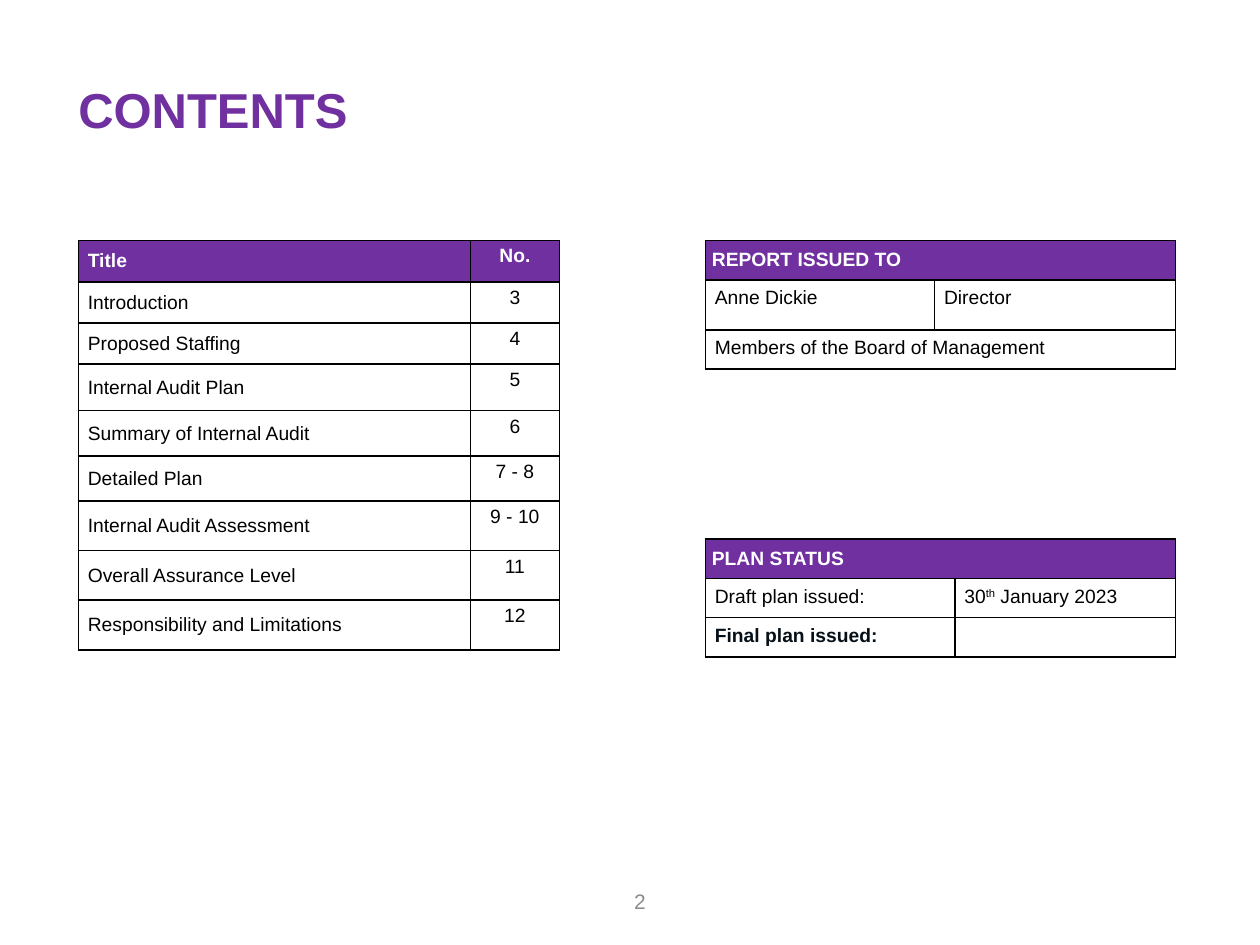
from lxml.etree import SubElement
from pptx import Presentation
from pptx.dml.color import RGBColor
from pptx.enum.text import MSO_ANCHOR, PP_ALIGN
from pptx.oxml.ns import qn
from pptx.util import Cm, Pt

COLORS = {"purple": "7030A0", "white": "FFFFFF", "black": "000000",
          "ink": "061018", "grey": "8C8C8C"}
CONTENTS = [("Title", "No."), ("Introduction", "3"), ("Proposed Staffing", "4"),
            ("Internal Audit Plan", "5"), ("Summary of Internal Audit", "6"),
            ("Detailed Plan", "7 - 8"), ("Internal Audit Assessment", "9 - 10"),
            ("Overall Assurance Level", "11"), ("Responsibility and Limitations", "12")]
RECIPIENTS = [("REPORT ISSUED TO",), ("Anne Dickie", "Director"),
              ("Members of the Board of Management",)]
STATUS = [("PLAN STATUS",), ("Draft plan issued:", ("30", "th", " January 2023")),
          ("Final plan issued:", "")]


def color(name):
    """Return a named colour."""
    return RGBColor.from_string(COLORS[name])


def style_para(para, size, tone, bold=False, align=PP_ALIGN.LEFT):
    """Set the font and alignment of a paragraph."""
    para.alignment = align
    font = para.font
    font.name, font.size, font.bold = "Arial", Pt(size), bold
    font.color.rgb = color(tone)


def set_margins(cell, side, end):
    """Set the side and the top and bottom margins of a cell."""
    cell.margin_left = cell.margin_right = Cm(side)
    cell.margin_top = cell.margin_bottom = Cm(end)


def add_borders(cell):
    """Draw a thin black line on each side of a cell."""
    properties = cell._tc.get_or_add_tcPr()
    for index, side in enumerate(("lnL", "lnR", "lnT", "lnB")):
        line = SubElement(properties, qn(f"a:{side}"), w=str(Pt(1)))
        fill = SubElement(line, qn("a:solidFill"))
        SubElement(fill, qn("a:srgbClr"), val=COLORS["black"])
        properties.insert(index, line)


def write_cell(cell, content):
    """Write text, or a text, superscript and text triple, into a cell."""
    para = cell.text_frame.paragraphs[0]
    parts = (content,) if isinstance(content, str) else content
    for index, text in enumerate(parts):
        if text:
            span = para.add_run()
            span.text = text
            if index == 1:
                span._r.get_or_add_rPr().set("baseline", "30000")


def add_grid(page, left, top, widths, heights, rows):
    """Add a bordered table with a purple heading; short rows are merged."""
    frame = page.shapes.add_table(len(rows), len(widths), Cm(left), Cm(top),
                                  Cm(sum(widths)), Cm(sum(heights)))
    table = frame.table
    table.first_row = table.horz_banding = False
    for column, width in zip(table.columns, widths):
        column.width = Cm(width)
    for number, (row, height, contents) in enumerate(zip(table.rows, heights, rows)):
        row.height = Cm(height)
        heading = number == 0
        for cell in row.cells:
            add_borders(cell)
            if heading:
                cell.fill.solid()
                cell.fill.fore_color.rgb = color("purple")
            else:
                cell.fill.background()
            style_para(cell.text_frame.paragraphs[0], 11,
                       "white" if heading else "black", heading)
        if len(contents) < len(widths):
            row.cells[0].merge(row.cells[len(widths) - 1])
        for cell, content in zip(row.cells, contents):
            write_cell(cell, content)
    return table


def add_contents(page, left, top):
    """Add the list of sections and page numbers."""
    heights = [0.83] * 3 + [0.94] + [0.91] * 2 + [1] * 3
    table = add_grid(page, left, top, (7.9, 1.8), heights, CONTENTS)
    for row in table.rows:
        title, number = row.cells
        title.vertical_anchor = MSO_ANCHOR.MIDDLE
        number.text_frame.paragraphs[0].alignment = PP_ALIGN.CENTER
        for cell in (title, number):
            set_margins(cell, 0.19, 0.1)


def add_panel(page, left, top, widths, heights, rows):
    """Add a table whose heading spans its columns."""
    table = add_grid(page, left, top, widths, heights, rows)
    for cell in table.iter_cells():
        set_margins(cell, 0.19, 0.15)
    heading = table.cell(0, 0)
    set_margins(heading, 0.13, 0.13)
    heading.text_frame.paragraphs[0].line_spacing = 1.1
    return table


def add_title(page, left, top, width, height):
    """Place and format the title."""
    title = page.shapes.title
    title.left, title.top, title.width, title.height = map(Cm, (left, top, width, height))
    frame = title.text_frame
    frame.text = "CONTENTS"
    frame.margin_left = frame.margin_right = frame.margin_top = frame.margin_bottom = 0
    frame.vertical_anchor = MSO_ANCHOR.MIDDLE
    para = frame.paragraphs[0]
    para.line_spacing = 0.9
    style_para(para, 28, "purple", True)


def add_page_number(page, left, top, width, height):
    """Add the page number."""
    box = page.shapes.add_textbox(Cm(left), Cm(top), Cm(width), Cm(height))
    frame = box.text_frame
    frame.word_wrap = True
    frame.vertical_anchor = MSO_ANCHOR.MIDDLE
    frame.text = "2"
    style_para(frame.paragraphs[0], 12, "grey", align=PP_ALIGN.RIGHT)


def main():
    """Build the contents slide."""
    deck = Presentation()
    deck.slide_width, deck.slide_height = Cm(25.4), Cm(19.05)
    page = deck.slides.add_slide(deck.slide_layouts[5])
    add_page_number(page, 12.12, 17.65, 1.15, 1.02)
    add_title(page, 1.58, 1.73, 22.23, 1.07)
    add_contents(page, 1.58, 4.85)
    status = add_panel(page, 14.22, 10.87, (5.03, 4.45), [0.79] * 3, STATUS)
    style_para(status.cell(2, 0).text_frame.paragraphs[0], 11, "ink", True)
    add_panel(page, 14.22, 4.85, (4.62, 4.86), (0.79, 1.01, 0.79), RECIPIENTS)
    deck.save("out.pptx")


if __name__ == "__main__":
    main()
